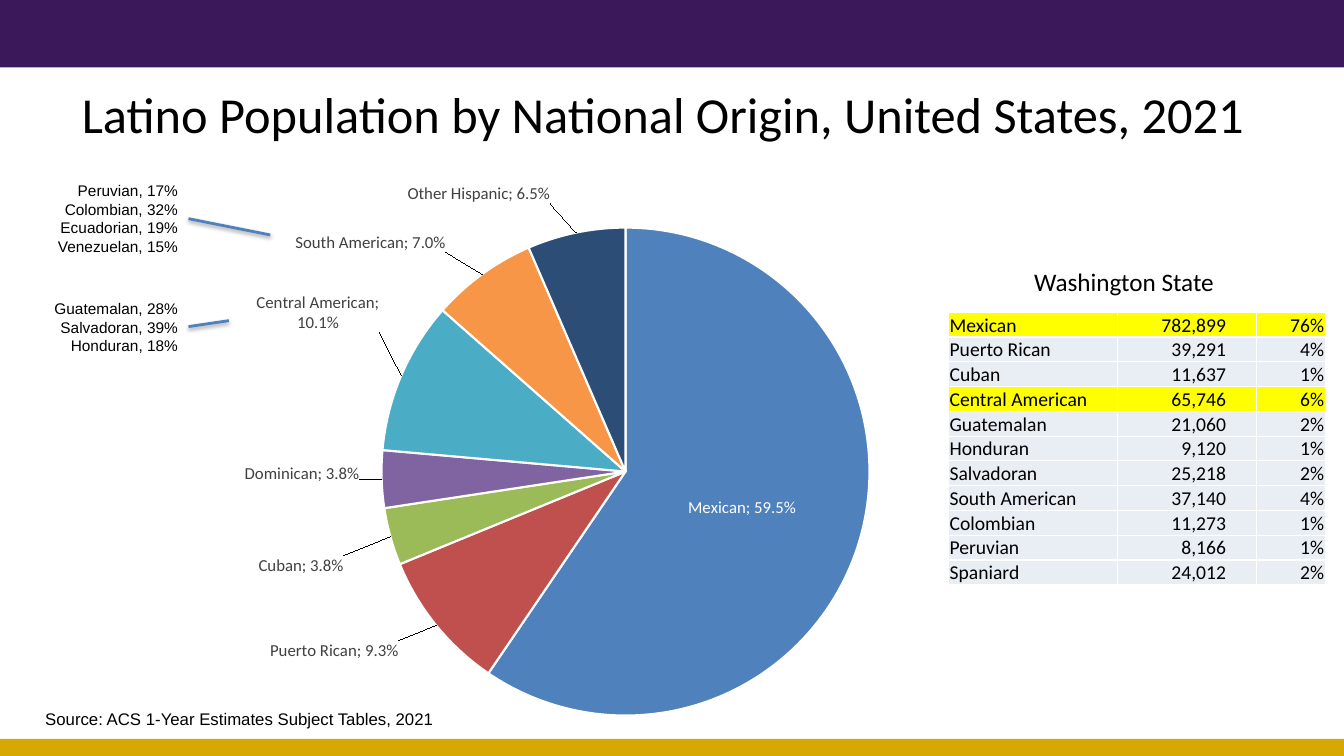
from dataclasses import dataclass

from pptx import Presentation
from pptx.chart.data import CategoryChartData
from pptx.dml.color import RGBColor
from pptx.enum.chart import XL_CHART_TYPE, XL_LABEL_POSITION
from pptx.enum.shapes import MSO_CONNECTOR, MSO_SHAPE
from pptx.enum.text import MSO_ANCHOR, PP_ALIGN
from pptx.oxml.xmlchemy import OxmlElement
from pptx.util import Cm, Pt

LEFT, CENTER, RIGHT = PP_ALIGN.LEFT, PP_ALIGN.CENTER, PP_ALIGN.RIGHT
TOP, MIDDLE, BOTTOM = MSO_ANCHOR.TOP, MSO_ANCHOR.MIDDLE, MSO_ANCHOR.BOTTOM
RECTANGLE = MSO_SHAPE.RECTANGLE
STRAIGHT = MSO_CONNECTOR.STRAIGHT
PIE = XL_CHART_TYPE.PIE
INSIDE, OUTSIDE = XL_LABEL_POSITION.CENTER, XL_LABEL_POSITION.OUTSIDE_END


@dataclass(frozen=True)
class Theme:
    """Colours, fonts and type sizes of the slide."""

    purple: RGBColor = RGBColor(0x3B, 0x18, 0x5A)
    gold: RGBColor = RGBColor(0xD7, 0xA9, 0x00)
    black: RGBColor = RGBColor(0x00, 0x00, 0x00)
    white: RGBColor = RGBColor(0xFF, 0xFF, 0xFF)
    label: RGBColor = RGBColor(0x40, 0x40, 0x40)
    highlight: RGBColor = RGBColor(0xFF, 0xFF, 0x00)
    row: RGBColor = RGBColor(0xE9, 0xED, 0xF4)
    blue: RGBColor = RGBColor(0x4F, 0x81, 0xBD)
    red: RGBColor = RGBColor(0xC0, 0x50, 0x4D)
    green: RGBColor = RGBColor(0x9B, 0xBB, 0x59)
    violet: RGBColor = RGBColor(0x80, 0x64, 0xA2)
    teal: RGBColor = RGBColor(0x4B, 0xAC, 0xC6)
    orange: RGBColor = RGBColor(0xF7, 0x96, 0x46)
    navy: RGBColor = RGBColor(0x2C, 0x4D, 0x75)
    heading_font: str = "Calibri"
    note_font: str = "Arial"
    title: int = 36
    subtitle: int = 18
    table: int = 14
    small: int = 12
    note: int = 11


THEME = Theme()

ORIGINS = [
    ("Mexican", 0.595, THEME.blue, None),
    ("Puerto Rican", 0.093, THEME.red, (-0.04, 0.02)),
    ("Cuban", 0.038, THEME.green, (-0.05, 0.03)),
    ("Dominican", 0.038, THEME.violet, (-0.02, -0.01)),
    ("Central American", 0.101, THEME.teal, (-0.02, -0.07)),
    ("South American", 0.07, THEME.orange, (-0.04, -0.03)),
    ("Other Hispanic", 0.065, THEME.navy, (-0.03, -0.04)),
]

WASHINGTON = [
    ("Mexican", "782,899", "76%"),
    ("Puerto Rican", "39,291", "4%"),
    ("Cuban", "11,637", "1%"),
    ("Central American", "65,746", "6%"),
    ("Guatemalan", "21,060", "2%"),
    ("Honduran", "9,120", "1%"),
    ("Salvadoran", "25,218", "2%"),
    ("South American", "37,140", "4%"),
    ("Colombian", "11,273", "1%"),
    ("Peruvian", "8,166", "1%"),
    ("Spaniard", "24,012", "2%"),
]
HIGHLIGHTED = {"Mexican", "Central American"}


def add_band(page, top, height, color):
    """Draw a full-width colour band."""
    band = page.shapes.add_shape(RECTANGLE, 0, Cm(top), Cm(33.87), Cm(height))
    band.shadow.inherit = False
    band.fill.solid()
    band.fill.fore_color.rgb = color
    band.line.fill.background()


def style(font, size, name, color):
    """Set the size, typeface and colour of a font."""
    font.size = Pt(size)
    font.name = name
    font.color.rgb = color


def write(para, text, size, name, align):
    """Add one run of styled text to a paragraph."""
    para.alignment = align
    span = para.add_run()
    span.text = text
    style(span.font, size, name, THEME.black)


def add_text(page, place, lines, size, name, align=LEFT, anchor=TOP):
    """Place a text box with one paragraph per line."""
    box = page.shapes.add_textbox(*map(Cm, place))
    frame = box.text_frame
    frame.word_wrap = True
    frame.vertical_anchor = anchor
    for index, line in enumerate(lines):
        para = frame.add_paragraph() if index else frame.paragraphs[0]
        write(para, line, size, name, align)


def add_pointer(page, start, end):
    """Draw a blue line that keeps the soft shadow of the deck theme."""
    pointer = page.shapes.add_connector(STRAIGHT, *map(Cm, start + end))
    pointer.line.color.rgb = THEME.blue
    pointer.line.width = Pt(2)


def set_layout(parent, index, **settings):
    """Put a manual chart layout at the given place among the children."""
    layout, manual = OxmlElement("c:layout"), OxmlElement("c:manualLayout")
    for name, value in settings.items():
        setting = OxmlElement(f"c:{name}")
        setting.set("val", str(value))
        manual.append(setting)
    layout.append(manual)
    parent.insert(index, layout)


def label_slice(point, offset):
    """Label a slice inside, or outside and moved by an offset."""
    label = point.data_label
    color = THEME.label if offset else THEME.white
    style(label.font, THEME.small, THEME.heading_font, color)
    label.position = OUTSIDE if offset else INSIDE
    element = point.data_label._dLbl
    element.xpath("./c:showCatName")[0].set("val", "1")
    if offset:
        set_layout(element, 1, x=offset[0], y=offset[1])


def add_pie(page):
    """Add the pie of national origins."""
    data = CategoryChartData(number_format="0.0%")
    data.categories = [origin for origin, _, _, _ in ORIGINS]
    data.add_series("Series 1", [share for _, share, _, _ in ORIGINS])
    place = map(Cm, (4.27, 4.06, 20.73, 14.45))
    chart = page.shapes.add_chart(PIE, *place, data).chart
    chart.has_title = False
    chart.has_legend = False
    style(chart.font, THEME.small, THEME.heading_font, THEME.label)
    plot = chart.plots[0]
    plot.vary_by_categories = True
    series = plot.series[0]
    labels = series.data_labels
    labels.show_value = True
    labels.show_category_name = True
    labels.number_format = "0.0%"
    labels.number_format_is_linked = False
    for index, (_, _, color, offset) in enumerate(ORIGINS):
        point = series.points[index]
        point.format.fill.solid()
        point.format.fill.fore_color.rgb = color
        point.format.line.color.rgb = THEME.white
        point.format.line.width = Pt(1.5)
        label_slice(point, offset)
    area = chart.element.xpath(".//c:plotArea")[0]
    for layout in area.xpath("./c:layout"):
        area.remove(layout)
    set_layout(area, 0, layoutTarget="inner", xMode="edge", yMode="edge",
               x=0.247, y=0.116, w=0.615, h=0.851)


def fill_cell(cell, text, color, align, right_margin):
    """Write one table cell with its fill."""
    cell.margin_left = cell.margin_top = Cm(0.03)
    cell.margin_right, cell.margin_bottom = Cm(right_margin), 0
    cell.vertical_anchor = BOTTOM
    cell.fill.solid()
    cell.fill.fore_color.rgb = color
    write(cell.text_frame.paragraphs[0], text, THEME.table, THEME.heading_font, align)


def add_state_table(page):
    """Add the Washington State counts and shares."""
    columns = [(4.27, LEFT, 0.03), (3.5, RIGHT, 0.77), (1.73, RIGHT, 0.03)]
    place = map(Cm, (23.9, 7.87, 9.5, 6.27))
    table = page.shapes.add_table(len(WASHINGTON), len(columns), *place).table
    table.first_row = table.horz_banding = False
    for column, (width, _, _) in zip(table.columns, columns):
        column.width = Cm(width)
    for row, values in zip(table.rows, WASHINGTON):
        row.height = Cm(0.57)
        color = THEME.highlight if values[0] in HIGHLIGHTED else THEME.row
        for cell, text, (_, align, margin) in zip(row.cells, values, columns):
            fill_cell(cell, text, color, align, margin)


def main():
    """Build the slide and save it."""
    deck = Presentation()
    deck.slide_width, deck.slide_height = Cm(33.87), Cm(19.05)
    page = deck.slides.add_slide(deck.slide_layouts[6])
    add_band(page, 0, 1.7, THEME.purple)
    add_band(page, 18.62, 0.43, THEME.gold)
    add_text(page, (0.89, 2.11, 31.65, 1.47),
             ["Latino Population by National Origin, United States, 2021"],
             THEME.title, THEME.heading_font, CENTER, MIDDLE)
    add_pie(page)
    add_text(page, (1.09, 7.42, 3.65, 1.68),
             ["Guatemalan, 28%", "Salvadoran, 39%", "Honduran, 18%"],
             THEME.note, THEME.note_font, RIGHT)
    add_text(page, (1.09, 4.44, 3.65, 2.13),
             ["Peruvian, 17%", "Colombian, 32%", "Ecuadorian, 19%", "Venezuelan, 15%"],
             THEME.note, THEME.note_font, RIGHT)
    add_pointer(page, (4.75, 5.51), (6.81, 5.92))
    add_pointer(page, (4.75, 8.23), (5.77, 8.08))
    add_text(page, (0.89, 17.73, 10.62, 0.76),
             ["Source: ACS 1-Year Estimates Subject Tables, 2021"],
             THEME.small, THEME.note_font)
    add_state_table(page)
    add_text(page, (25.81, 6.58, 5.2, 1.02), ["Washington State"],
             THEME.subtitle, THEME.heading_font)
    deck.save("out.pptx")


if __name__ == "__main__":
    main()
